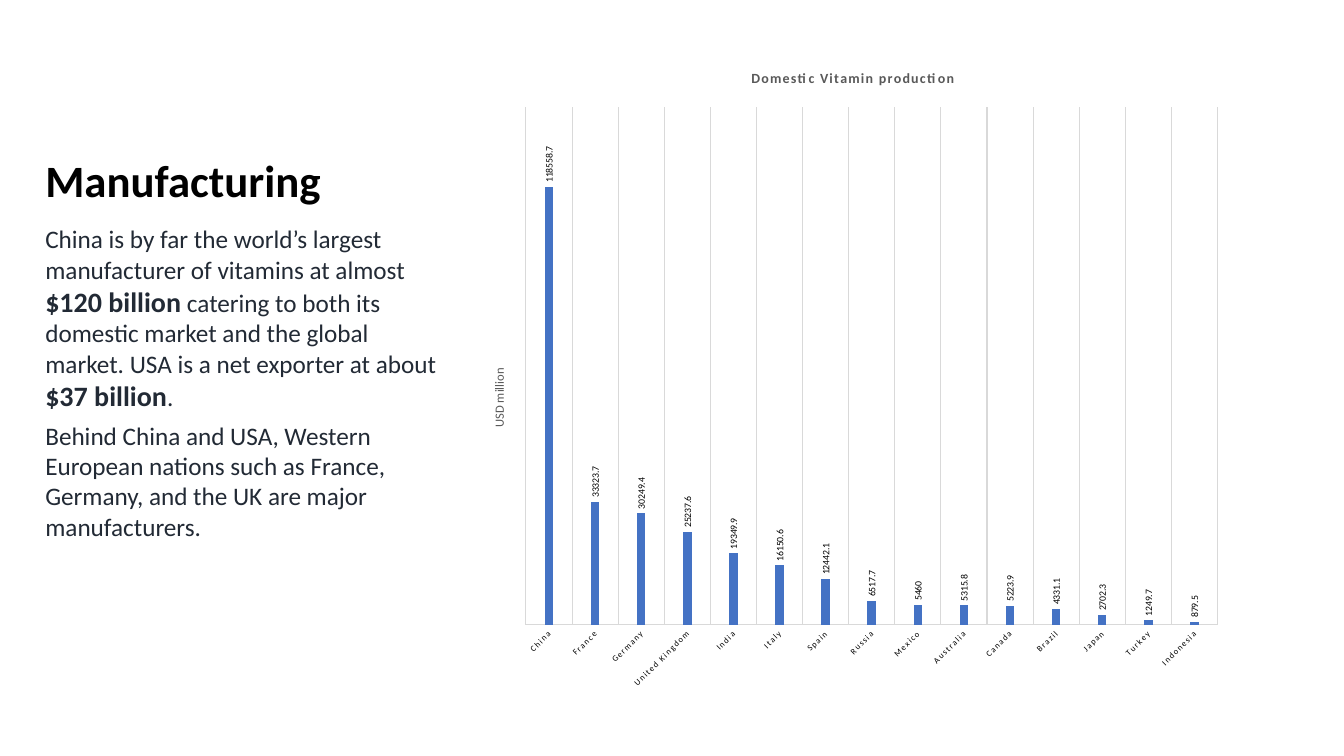
from dataclasses import dataclass

from pptx import Presentation, util as u
from pptx.chart.data import CategoryChartData
from pptx.dml.color import RGBColor
from pptx.enum import chart as ch, text
from pptx.oxml import parse_xml
from pptx.oxml.ns import nsdecls, qn

BLACK = RGBColor(0x00, 0x00, 0x00)
NAVY = RGBColor(0x22, 0x2A, 0x35)
GREY = RGBColor(0x59, 0x59, 0x59)
PALE_GREY = RGBColor(0xD9, 0xD9, 0xD9)
BLUE = RGBColor(0x44, 0x72, 0xC4)
FONT = "Calibri"

PRODUCTION = {
    "China": 118558.7, "France": 33323.7, "Germany": 30249.4,
    "United Kingdom": 25237.6, "India": 19349.9, "Italy": 16150.6,
    "Spain": 12442.1, "Russia": 6517.7, "Mexico": 5460,
    "Australia": 5315.8, "Canada": 5223.9, "Brazil": 4331.1,
    "Japan": 2702.3, "Turkey": 1249.7, "Indonesia": 879.5,
}


@dataclass(frozen=True)
class Run:
    wording: str
    size: float = 18
    bold: bool = False
    color: RGBColor = NAVY


@dataclass(frozen=True)
class Paragraph:
    runs: tuple[Run, ...]
    space_after: float = 6


STORY = (
    Paragraph((Run("Manufacturing", 32, True, BLACK),), space_after=12),
    Paragraph((
        Run("China is by far the world’s largest manufacturer of vitamins at almost "),
        Run("$120 billion", 20, True),
        Run(" catering to both its domestic market and the global market. "
            "USA is a net exporter at about "),
        Run("$37 billion", 20, True),
        Run("."),
    )),
    Paragraph((
        Run("Behind China and USA, Western European nations such as France, "
            "Germany, and the UK are major manufacturers."),
    )),
)


def style_font(font, *, size: float, color: RGBColor = BLACK, bold: bool = False) -> None:
    font.name = FONT
    font.size = u.Pt(size)
    font.bold = bold
    font.color.rgb = color


def add_text(paragraph, wording: str, **font_format):
    run = paragraph.add_run()
    run.text = wording
    style_font(run.font, **font_format)
    return run


def add_story(slide, paragraphs: tuple[Paragraph, ...]) -> None:
    frame = slide.shapes.add_textbox(u.Pt(32.4), u.Pt(109.4), u.Pt(283), u.Pt(285.8)).text_frame
    frame.word_wrap = True
    frame.auto_size = text.MSO_AUTO_SIZE.SHAPE_TO_FIT_TEXT
    frame.margin_left = frame.margin_right = frame.margin_top = frame.margin_bottom = 0
    for index, item in enumerate(paragraphs):
        paragraph = frame.add_paragraph() if index else frame.paragraphs[0]
        paragraph.space_after = u.Pt(item.space_after)
        for run in item.runs:
            add_text(paragraph, run.wording, size=run.size, color=run.color, bold=run.bold)


def rotate(owner, degrees: int) -> None:
    """Turn the text held by a chart element."""
    body = next(owner.iter(qn("a:bodyPr")))
    body.set("rot", str(degrees * 60000))
    body.set("vert", "horz")


def space_letters(owner, points: float) -> None:
    """Widen the letter spacing of a chart element's text."""
    for properties in owner.iter(qn("a:defRPr"), qn("a:rPr")):
        properties.set("spc", str(int(points * 100)))


def place_plot(chart, x: float, y: float, w: float, h: float) -> None:
    """Fix the inner plot area, in fractions of the chart."""
    plot_area = chart.plots[0]._element.getparent()
    for layout in plot_area.findall(qn("c:layout")):
        plot_area.remove(layout)
    sizes = "".join(f'<c:{tag} val="{value}"/>' for tag, value in zip("xywh", (x, y, w, h)))
    plot_area.insert(0, parse_xml(
        f'<c:layout {nsdecls("c")}><c:manualLayout><c:layoutTarget val="inner"/>'
        f'<c:xMode val="edge"/><c:yMode val="edge"/>{sizes}</c:manualLayout></c:layout>'))


def format_axes(chart) -> None:
    countries = chart.category_axis
    countries.major_tick_mark = countries.minor_tick_mark = ch.XL_TICK_MARK.NONE
    countries.has_major_gridlines = True
    for line in (countries.format.line, countries.major_gridlines.format.line):
        line.color.rgb = PALE_GREY
        line.width = u.Pt(0.75)
    style_font(countries.tick_labels.font, size=6)
    label_text = countries._element.find(qn("c:txPr"))
    rotate(label_text, -45)
    space_letters(label_text, 1)

    dollars = chart.value_axis
    dollars.minimum_scale, dollars.maximum_scale = 0, 140000
    dollars.has_major_gridlines = False
    dollars.visible = False
    add_text(dollars.axis_title.text_frame.paragraphs[0], "USD million", size=9, color=GREY)
    rotate(dollars.axis_title._element, -90)


def add_production_chart(slide, production: dict[str, float]) -> None:
    data = CategoryChartData(number_format="General")
    data.categories = production.keys()
    data.add_series("Series 1", production.values())
    chart = slide.shapes.add_chart(
        ch.XL_CHART_TYPE.COLUMN_CLUSTERED,
        u.Pt(337.7), u.Pt(34.6), u.Pt(542.9), u.Pt(468), data).chart
    style_font(chart.font, size=10)
    chart.has_legend = False
    chart.has_title = True
    add_text(chart.chart_title.text_frame.paragraphs[0], "Domestic Vitamin production",
             size=10, color=GREY, bold=True)
    space_letters(chart.chart_title._element, 1)
    chart.chart_title.include_in_layout = False

    columns = chart.plots[0]
    columns.gap_width, columns.overlap = 444, -90
    columns.vary_by_categories = False
    fill = columns.series[0].format.fill
    fill.solid()
    fill.fore_color.rgb = BLUE

    labels = columns.series[0].data_labels
    labels.show_value = True
    labels.position = ch.XL_LABEL_POSITION.OUTSIDE_END
    style_font(labels.font, size=7)
    rotate(labels._element, -90)

    format_axes(chart)
    place_plot(chart, 0.07, 0.09, 0.91, 0.79)


def main() -> None:
    deck = Presentation()
    deck.slide_width, deck.slide_height = u.Pt(960), u.Pt(540)
    slide = deck.slides.add_slide(deck.slide_layouts[6])
    add_production_chart(slide, PRODUCTION)
    add_story(slide, STORY)
    deck.save("out.pptx")


if __name__ == "__main__":
    main()
